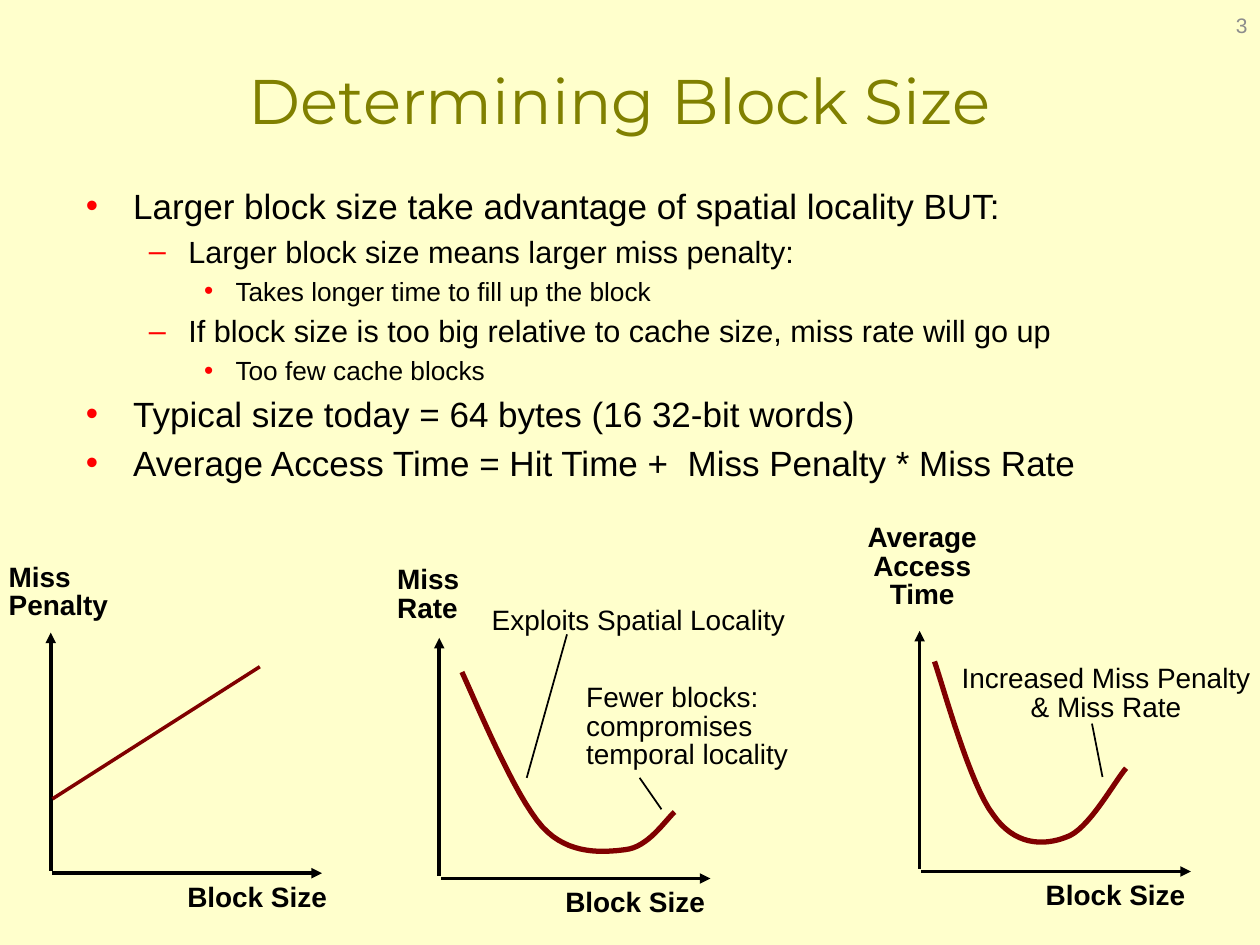
from lxml.etree import SubElement
from pptx import Presentation
from pptx.dml.color import RGBColor
from pptx.enum.shapes import MSO_CONNECTOR
from pptx.enum.text import MSO_ANCHOR, MSO_AUTO_SIZE, PP_ALIGN
from pptx.oxml.ns import qn
from pptx.util import Pt

CREAM = RGBColor(0xFF, 0xFF, 0xCC)
OLIVE = RGBColor(0x80, 0x80, 0x00)
MAROON = RGBColor(0x80, 0x00, 0x00)
BLACK = RGBColor(0x00, 0x00, 0x00)
GREY = RGBColor(0x8C, 0x8C, 0x8C)
RED = RGBColor(0xFF, 0x00, 0x00)

AXIS_HEIGHT, AXIS_LENGTH = 136, 154
CURVE_STEPS = 16

LEVELS = [(20, 27, 27, "•"), (17.5, 58.5, 22.5, "–"), (15, 85.5, 18, "•")]
POINTS = [
    (0, "Larger block size take advantage of spatial locality BUT:"),
    (1, "Larger block size means larger miss penalty:"),
    (2, "Takes longer time to fill up the block"),
    (1, "If block size is too big relative to cache size, miss rate will go up"),
    (2, "Too few cache blocks"),
    (0, "Typical size today = 64 bytes (16 32-bit words)"),
    (0, "Average Access Time = Hit Time +  Miss Penalty * Miss Rate"),
]


def style(paragraph, size, color, name="Arial", bold=False, align=PP_ALIGN.LEFT):
    paragraph.alignment = align
    font = paragraph.font
    font.size, font.name, font.bold = Pt(size), name, bold
    font.color.rgb = color


def add_title(slide, left, top, width, height):
    title = slide.shapes.title
    title.left, title.top, title.width, title.height = map(Pt, (left, top, width, height))
    title.text_frame.text = "Determining Block Size"
    title.text_frame.vertical_anchor = MSO_ANCHOR.MIDDLE
    style(title.text_frame.paragraphs[0], 36, OLIVE, "Montserrat", align=PP_ALIGN.CENTER)


def add_slide_number(slide, left, top, width, height):
    frame = slide.shapes.add_textbox(*map(Pt, (left, top, width, height))).text_frame
    frame.word_wrap = True
    frame.vertical_anchor = MSO_ANCHOR.MIDDLE
    frame.text = "3"
    style(frame.paragraphs[0], 12, GREY, align=PP_ALIGN.RIGHT)


def add_bullet(paragraph, symbol, margin, hanging):
    properties = paragraph._p.get_or_add_pPr()
    properties.set("marL", str(Pt(margin)))
    properties.set("indent", str(-Pt(hanging)))
    color = SubElement(properties, qn("a:buClr"))
    SubElement(color, qn("a:srgbClr"), val=str(RED))
    SubElement(properties, qn("a:buFont"), typeface="Arial")
    SubElement(properties, qn("a:buChar"), char=symbol)


def add_points(slide, left, top, width, height):
    frame = slide.shapes.add_textbox(*map(Pt, (left, top, width, height))).text_frame
    frame.word_wrap = True
    frame.text = "\n".join(text for _, text in POINTS)
    for paragraph, (level, _) in zip(frame.paragraphs, POINTS):
        size, margin, hanging, symbol = LEVELS[level]
        paragraph.level = level
        style(paragraph, size, BLACK)
        paragraph.space_before = Pt(size * 0.2)
        add_bullet(paragraph, symbol, margin, hanging)


def add_line(slide, start, end, color, width, arrow=False):
    line = slide.shapes.add_connector(MSO_CONNECTOR.STRAIGHT, *map(Pt, start + end))
    line.line.color.rgb = color
    line.line.width = Pt(width)
    if arrow:
        SubElement(line.line._get_or_add_ln(), qn("a:tailEnd"), type="triangle")
    SubElement(line._element.spPr, qn("a:effectLst"))


def add_label(slide, text, left, top, width, height, bold=False,
              align=PP_ALIGN.LEFT, margins=(5, 2), spacing=0.85):
    frame = slide.shapes.add_textbox(*map(Pt, (left, top, width, height))).text_frame
    frame.margin_left = frame.margin_right = Pt(margins[0])
    frame.margin_top = frame.margin_bottom = Pt(margins[1])
    frame.word_wrap = False
    frame.auto_size = MSO_AUTO_SIZE.SHAPE_TO_FIT_TEXT
    frame.text = text
    for paragraph in frame.paragraphs:
        style(paragraph, 16, BLACK, bold=bold, align=align)
        paragraph.line_spacing = spacing


def bezier(p0, p1, p2, p3, t):
    s = 1 - t
    weights = (s ** 3, 3 * s * s * t, 3 * s * t * t, t ** 3)
    return tuple(Pt(sum(w * p[axis] for w, p in zip(weights, (p0, p1, p2, p3))))
                 for axis in (0, 1))


def add_curve(slide, left, top, controls):
    controls = [(left + x, top + y) for x, y in controls]
    vertices = [bezier(*controls[i:i + 4], step / CURVE_STEPS)
                for i in range(0, len(controls) - 1, 3)
                for step in range(1, CURVE_STEPS + 1)]
    builder = slide.shapes.build_freeform(*map(Pt, controls[0]))
    builder.add_line_segments(vertices, close=False)
    curve = builder.convert_to_shape()
    curve.fill.background()
    curve.line.color.rgb = MAROON
    curve.line.width = Pt(3)
    curve.shadow.inherit = False


def add_axes(slide, left, top, size_label_x=65):
    base = top + AXIS_HEIGHT
    add_line(slide, (left, base), (left, top), BLACK, 2, arrow=True)
    add_line(slide, (left + 1, base + 1.5), (left + 1 + AXIS_LENGTH, base + 1.5),
             BLACK, 2, arrow=True)
    add_label(slide, "Block Size", left + size_label_x, base + 1.5, 95, 26,
              bold=True, margins=(7, 3.5), spacing=1.0)


def add_penalty_plot(slide, left, top):
    add_axes(slide, left, top, size_label_x=71)
    add_label(slide, "Miss\nPenalty", left - 29, top - 41, 72, 37, bold=True)
    add_line(slide, (left + 1, top + 95), (left + 119.5, top + 19.5), MAROON, 2)


def add_rate_plot(slide, left, top):
    add_axes(slide, left, top)
    add_label(slide, "Miss\nRate", left - 29, top - 42.5, 52, 37, bold=True)
    add_label(slide, "Exploits Spatial Locality", left + 25, top - 19, 184, 20)
    add_label(slide, "Fewer blocks:\ncompromises\ntemporal locality",
              left + 79, top + 25, 132, 53)
    add_line(slide, (left + 50, top + 80), (left + 73, top - 2), BLACK, 1)
    add_line(slide, (left + 127, top + 98), (left + 114.5, top + 80), BLACK, 1)
    add_curve(slide, left, top, [
        (13, 19.5), (20, 34.5), (43, 90.5), (59, 108), (74, 124.5),
        (94.5, 122.5), (106.5, 121), (119.5, 119.5), (129, 104.5), (134.5, 99.5)])


def add_access_time_plot(slide, left, top):
    add_axes(slide, left, top)
    add_label(slide, "Average\nAccess\nTime", left - 37, top - 62.5, 77, 53,
              bold=True, align=PP_ALIGN.CENTER)
    add_label(slide, "Increased Miss Penalty\n& Miss Rate", left + 17, top + 18,
              179, 37, align=PP_ALIGN.CENTER)
    add_line(slide, (left + 104.5, top + 83.5), (left + 98.5, top + 53), BLACK, 1)
    add_curve(slide, left, top, [
        (8.5, 17.5), (13.5, 32), (29, 88.5), (42, 105), (54, 122.5),
        (70.5, 123), (83.5, 118), (96.5, 114), (111, 86.5), (118, 78.5)])


def main():
    presentation = Presentation()
    presentation.slide_width, presentation.slide_height = Pt(720), Pt(540)
    slide = presentation.slides.add_slide(presentation.slide_layouts[5])
    slide.background.fill.solid()
    slide.background.fill.fore_color.rgb = CREAM
    add_title(slide, 42, 12, 624, 90)
    add_points(slide, 42, 102, 624, 201)
    add_slide_number(slide, 552, 0, 168, 29)
    add_penalty_plot(slide, 29, 361.5)
    add_rate_plot(slide, 251, 364.5)
    add_access_time_plot(slide, 525.5, 360.5)
    presentation.save("out.pptx")


if __name__ == "__main__":
    main()
